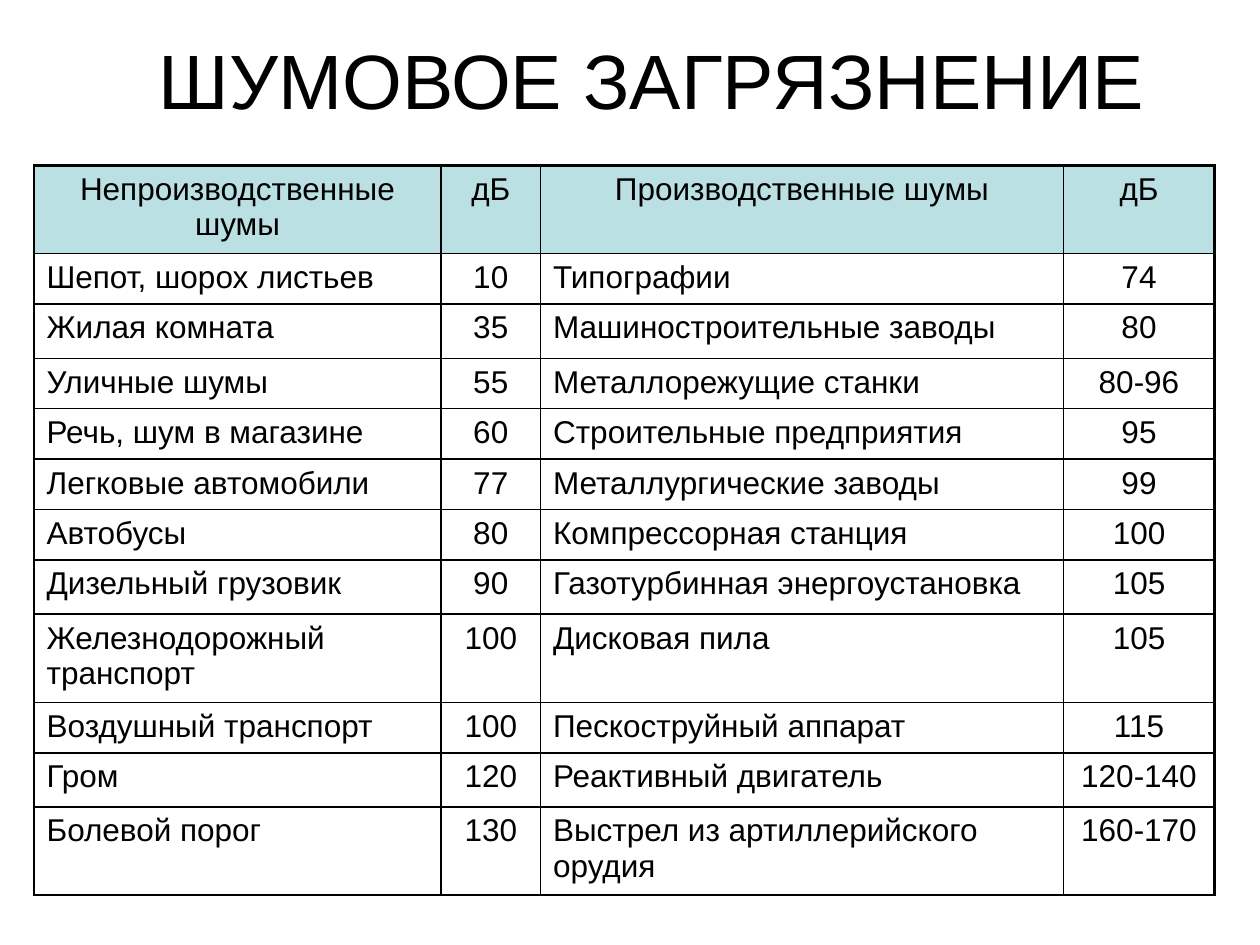
import dataclasses
import lxml.etree
import pptx
import pptx.dml.color
import pptx.enum.text
import pptx.oxml.ns
import pptx.util

TITLE = "ШУМОВОЕ ЗАГРЯЗНЕНИЕ"
ROWS = [
    ("Непроизводственные шумы", "дБ", "Производственные шумы", "дБ"),
    ("Шепот, шорох листьев", "10", "Типографии", "74"),
    ("Жилая комната", "35", "Машиностроительные заводы", "80"),
    ("Уличные шумы", "55", "Металлорежущие станки", "80-96"),
    ("Речь, шум в магазине", "60", "Строительные предприятия", "95"),
    ("Легковые автомобили", "77", "Металлургические заводы", "99"),
    ("Автобусы", "80", "Компрессорная станция", "100"),
    ("Дизельный грузовик", "90", "Газотурбинная энергоустановка", "105"),
    ("Железнодорожный транспорт", "100", "Дисковая пила", "105"),
    ("Воздушный транспорт", "100", "Пескоструйный аппарат", "115"),
    ("Гром", "120", "Реактивный двигатель", "120-140"),
    ("Болевой порог", "130", "Выстрел из артиллерийского орудия", "160-170"),
]
COLS = [3.23, 0.79, 4.15, 1.2]
TALL, MID, LOW = 0.7, 0.43, 0.4
HIGH = {0: TALL, 2: MID, 7: MID, 8: TALL, 10: MID, 11: TALL}
SIZE = (10, 7.5)
HEAD = (0.114, 0, 0.807, 0.167)
GRID = (0.027, 0.175)


@dataclasses.dataclass(frozen=True)
class Theme:
    font: str = "Arial"
    ink: str = "000000"
    band: str = "BBE0E3"
    title: int = 44
    body: int = 18
    edge: float = 1.5
    line: float = 1


LOOK = Theme()
ALIGN = pptx.enum.text.PP_ALIGN
inch = pptx.util.Inches


def color(code):
    return pptx.dml.color.RGBColor.from_string(code)


def tag(parent, name, **attrs):
    return lxml.etree.SubElement(parent, pptx.oxml.ns.qn(name), attrs)


def write(frame, text, size, align):
    para = frame.paragraphs[0]
    para.alignment = align
    run = para.add_run()
    run.text = text
    run.font.name = LOOK.font
    run.font.size = pptx.util.Pt(size)
    run.font.color.rgb = color(LOOK.ink)
    return para


def border(cell, outer):
    props = cell._tc.get_or_add_tcPr()
    for spot, (side, edge) in enumerate(outer.items()):
        width = pptx.util.Pt(LOOK.edge if edge else LOOK.line)
        line = tag(props, "a:ln" + side, w=str(int(width)))
        tag(tag(line, "a:solidFill"), "a:srgbClr", val=LOOK.ink)
        props.insert(spot, line)


def heading(slide):
    left, top, wide, high = [
        inch(part * SIZE[i % 2]) for i, part in enumerate(HEAD)
    ]
    frame = slide.shapes.add_textbox(left, top, wide, high).text_frame
    frame.word_wrap = True
    frame.vertical_anchor = pptx.enum.text.MSO_ANCHOR.MIDDLE
    write(frame, TITLE, LOOK.title, ALIGN.CENTER)


def grid(slide):
    highs = [HIGH.get(r, LOW) for r in range(len(ROWS))]
    left, top = [inch(part * full) for part, full in zip(GRID, SIZE)]
    table = slide.shapes.add_table(
        len(ROWS), len(COLS), left, top, inch(sum(COLS)), inch(sum(highs))
    ).table
    table.first_row = table.horz_banding = False
    for col, wide in zip(table.columns, COLS):
        col.width = inch(wide)
    for row, high in zip(table.rows, highs):
        row.height = inch(high)
    for r, texts in enumerate(ROWS):
        for c, text in enumerate(texts):
            cell = table.cell(r, c)
            if r == 0:
                cell.fill.solid()
                cell.fill.fore_color.rgb = color(LOOK.band)
            else:
                cell.fill.background()
            border(cell, {
                "L": c == 0,
                "R": c == len(COLS) - 1,
                "T": r == 0,
                "B": r == len(ROWS) - 1,
            })
            mid = r == 0 or c % 2 == 1
            align = ALIGN.CENTER if mid else ALIGN.LEFT
            para = write(cell.text_frame, text, LOOK.body, align)
            space = tag(para._p.get_or_add_pPr(), "a:spcBef")
            tag(space, "a:spcPct", val="20000")


def main():
    deck = pptx.Presentation()
    deck.slide_width, deck.slide_height = [inch(full) for full in SIZE]
    slide = deck.slides.add_slide(deck.slide_layouts[6])
    heading(slide)
    grid(slide)
    deck.save("out.pptx")


if __name__ == "__main__":
    main()
